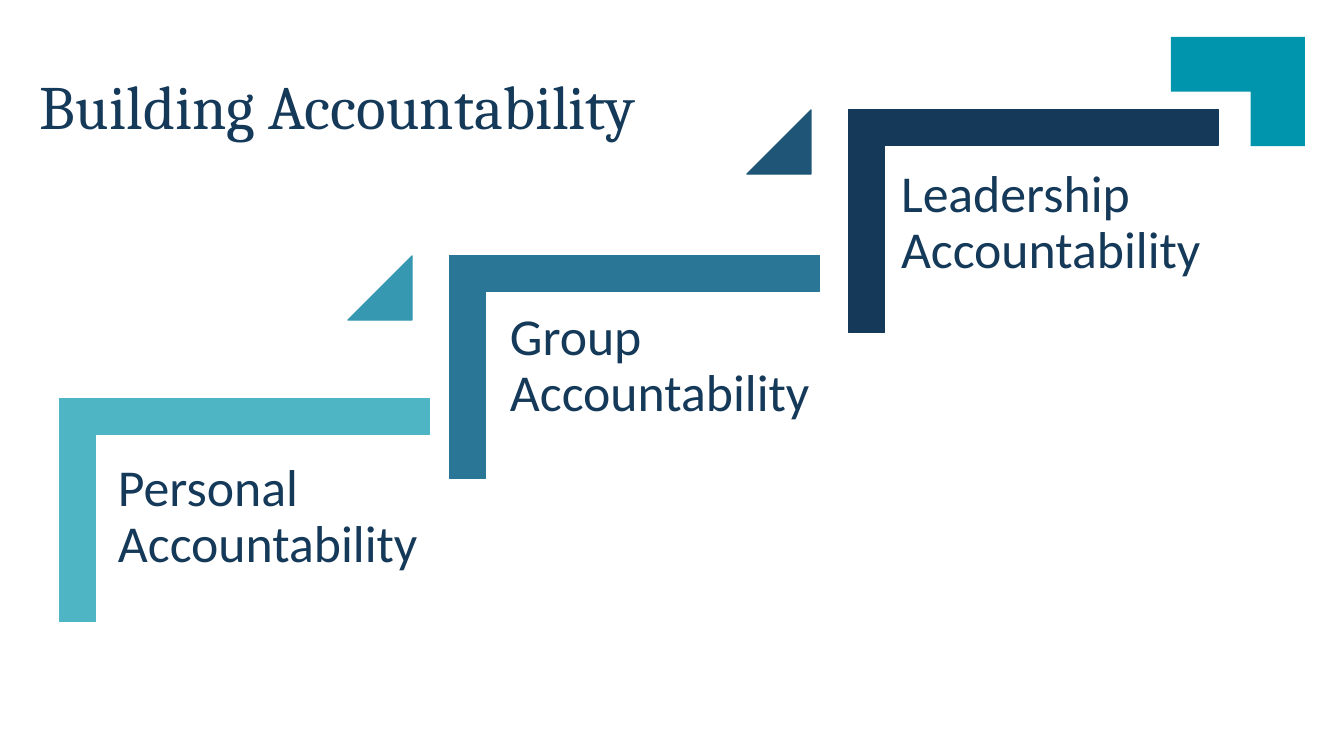
"""Builds the Building Accountability staircase slide."""
from pptx import Presentation
from pptx.dml.color import RGBColor
from pptx.enum.shapes import MSO_SHAPE
from pptx.enum.text import MSO_ANCHOR
from pptx.util import Emu, Pt

CORNER, TRIANGLE = MSO_SHAPE.CORNER, MSO_SHAPE.ISOSCELES_TRIANGLE
TOP, MIDDLE = MSO_ANCHOR.TOP, MSO_ANCHOR.MIDDLE

COLORS = {
    "navy": "153959", "blue": "2A7696", "aqua": "4EB5C4",
    "sky": "3798B2", "steel": "1F5678", "teal": "0095AD",
}
TITLE = "Building Accountability"
STEPS = [
    {"text": "Personal Accountability", "color": "aqua",
     "corner": (133, 325), "label": (103, 447)},
    {"text": "Group Accountability", "color": "blue",
     "corner": (523, 182), "label": (495, 296)},
    {"text": "Leadership Accountability", "color": "navy",
     "corner": (922, 36), "label": (886, 153)},
]
RISERS = [((348, 256), "sky"), ((747, 110), "steel")]
CORNER_SIZE, LABEL_SIZE, RISER_SIZE = (223, 370), (335, 293), (64, 64)
ARM = 0.16


def px(n):
    return Emu(round(n * 914400 / 100.8))


def rgb(name):
    return RGBColor.from_string(COLORS[name])


def add_shape(s, kind, box, color, rotation=0, adjust=(), outline=True):
    sp = s.shapes.add_shape(kind, *map(px, box))
    sp.shadow.inherit = False
    sp.rotation = rotation
    for i, value in enumerate(adjust):
        sp.adjustments[i] = value
    sp.fill.solid()
    sp.fill.fore_color.rgb = rgb(color)
    if outline:
        sp.line.color.rgb = rgb(color)
        sp.line.width = Pt(1)
    else:
        sp.line.fill.background()


def add_text(s, text, box, font="Calibri", size=37, color="navy", anchor=TOP, inset=(15, 15)):
    tf = s.shapes.add_textbox(*map(px, box)).text_frame
    tf.word_wrap = True
    tf.vertical_anchor = anchor
    tf.margin_left = tf.margin_right = px(inset[0])
    tf.margin_top = tf.margin_bottom = px(inset[1])
    p = tf.paragraphs[0]
    p.line_spacing = 0.9
    r = p.add_run()
    r.text = text
    r.font.name, r.font.size = font, Pt(size)
    r.font.color.rgb = rgb(color)


def main():
    prs = Presentation()
    prs.slide_width, prs.slide_height = px(1344), px(756)
    s = prs.slides.add_slide(prs.slide_layouts[6])
    add_shape(s, CORNER, (1171, 37, 134, 109), "teal", rotation=180, outline=False)
    add_text(s, TITLE, (30, 37, 1125, 146), font="Cambria", size=44,
             anchor=MIDDLE, inset=(10, 5))
    for step in STEPS:
        add_shape(s, CORNER, step["corner"] + CORNER_SIZE, step["color"],
                  rotation=90, adjust=(ARM, ARM))
        add_text(s, step["text"], step["label"] + LABEL_SIZE)
    for position, color in RISERS:
        add_shape(s, TRIANGLE, position + RISER_SIZE, color, adjust=(1,))
    prs.save("out.pptx")


if __name__ == "__main__":
    main()
